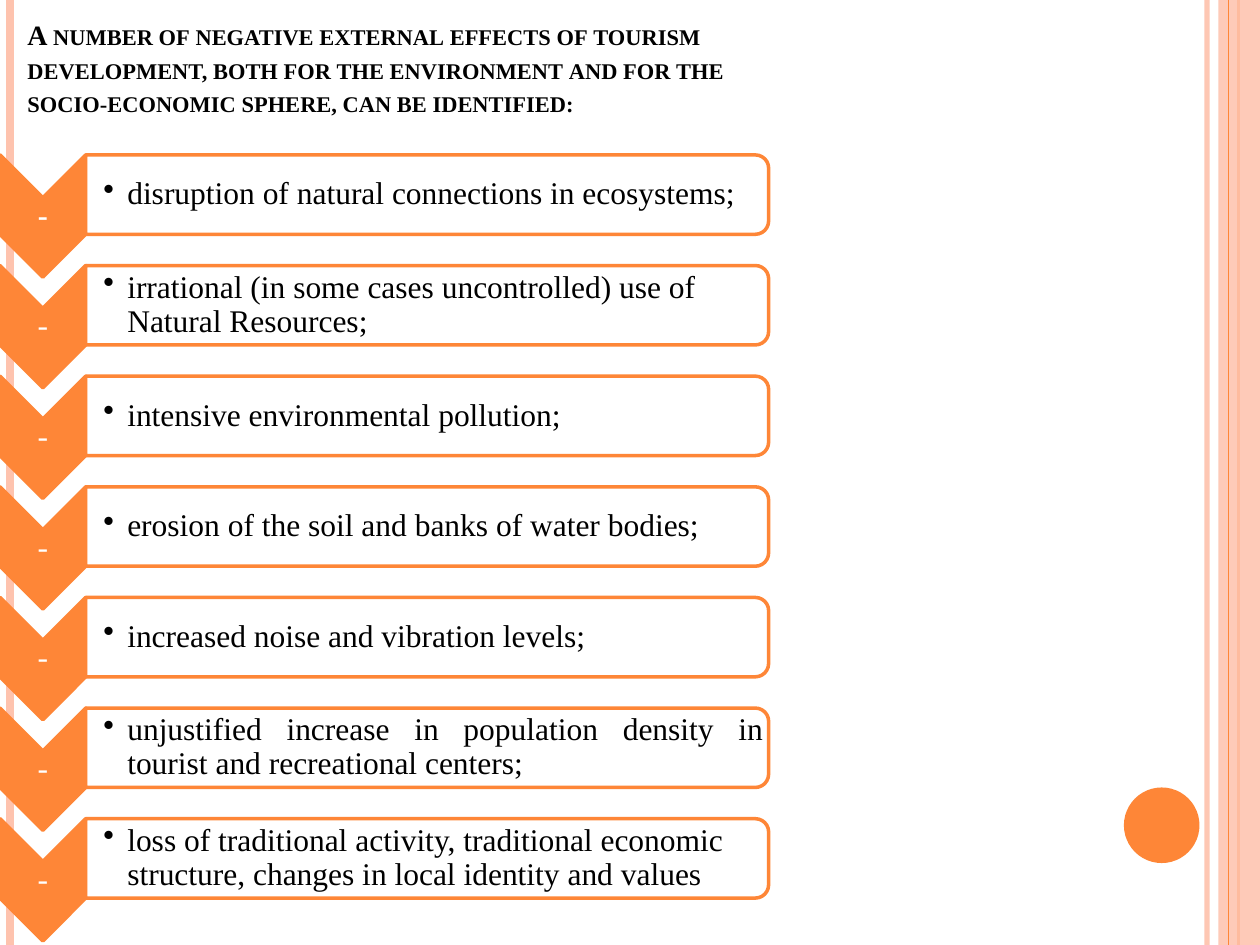
import pptx
import pptx.util
import pptx.dml.color
import pptx.enum.shapes
import pptx.enum.text
import pptx.oxml.ns

COLS, ROWS = 100, 75  # square grid, ten cells to the inch
CELL = pptx.util.Inches(0.1)
HUES = {"main": "FE8637", "pale": "FEC3AE", "text": "000000", "white": "FFFFFF"}
FONT = "Times New Roman"
KIND = pptx.enum.shapes.MSO_SHAPE
SIDE = pptx.enum.text.PP_ALIGN
MID = pptx.enum.text.MSO_ANCHOR.MIDDLE
LOW = pptx.enum.text.MSO_ANCHOR.BOTTOM

TITLE = ("A number of negative external effects of tourism development, both for "
         "the environment and for the socio-economic sphere, can be identified:")
ITEMS = [
    ("disruption of natural connections in ecosystems;", SIDE.LEFT),
    ("irrational (in some cases uncontrolled) use of Natural Resources;", SIDE.LEFT),
    ("intensive environmental pollution;", SIDE.LEFT),
    ("erosion of the soil and banks of water bodies;", SIDE.LEFT),
    ("increased noise and vibration levels;", SIDE.LEFT),
    ("unjustified increase in population density in tourist and recreational centers;",
     SIDE.JUSTIFY),
    ("loss of traditional activity, traditional economic structure, "
     "changes in local identity and values", SIDE.LEFT),
]
TOP, STEP = 12.6, 8.78  # first row of the list and row pitch


def grid(*cells):
    return [round(cell * CELL) for cell in cells]


def hue(name):
    return pptx.dml.color.RGBColor.from_string(HUES[name])


def child(node, tag, **attrs):
    part = node.makeelement(pptx.oxml.ns.qn(tag), attrs)
    node.append(part)
    return part


def fade(shape, share):
    """Set the opacity, in percent, of the first colour of a shape."""
    tone = next(shape._element.iter(pptx.oxml.ns.qn("a:srgbClr")))
    child(tone, "a:alpha", val=str(share * 1000))


def rule(slide, col, width, color, alpha=None):
    x, end = grid(col, ROWS)
    line = slide.shapes.add_connector(
        pptx.enum.shapes.MSO_CONNECTOR.STRAIGHT, x, 0, x, end)
    line.line.color.rgb = hue(color)
    line.line.width = pptx.util.Pt(width)
    child(line._element.spPr, "a:effectLst")
    if alpha:
        fade(line, alpha)


def form(slide, kind, cells, fill, line=None, alpha=None, turn=0):
    """Draw a preset shape; cells give its left, top, width and height."""
    shape = slide.shapes.add_shape(kind, *grid(*cells))
    shape.shadow.inherit = False
    shape.rotation = turn
    shape.fill.solid()
    shape.fill.fore_color.rgb = hue(fill)
    if line:
        shape.line.color.rgb = hue(line)
        shape.line.width = pptx.util.Pt(2)
    else:
        shape.line.fill.background()
    if alpha:
        fade(shape, alpha)


def upright(slide, kind, cells, **style):
    """Draw a shape turned a quarter, so that it fills the given cells."""
    x, y, w, h = cells
    form(slide, kind, (x + (w - h) / 2, y + (h - w) / 2, h, w), turn=90, **style)


def write(slide, text, cells, size=18, font=FONT, color="text", bold=False, small=False,
          align=SIDE.LEFT, anchor=MID, pad=(0.1, 0.1, 0.1, 0.1), space=0.9, bullet=False):
    frame = slide.shapes.add_textbox(*grid(*cells)).text_frame
    frame.word_wrap = True
    frame.vertical_anchor = anchor
    (frame.margin_left, frame.margin_top,
     frame.margin_right, frame.margin_bottom) = grid(*pad)
    para = frame.paragraphs[0]
    para.alignment = align
    para.line_spacing = space
    if bullet:
        props = para._p.get_or_add_pPr()
        dent = grid(1.9)[0]
        props.set("marL", str(dent))
        props.set("indent", str(-dent))
        child(props, "a:buChar", char="•")
    run = para.add_run()
    run.text = text
    run.font.name = font
    run.font.size = pptx.util.Pt(size)
    run.font.bold = bold
    run.font.color.rgb = hue(color)
    if small:
        run._r.get_or_add_rPr().set("cap", "small")


def decor(slide):
    rule(slide, 95.8, 3, "pale", alpha=93)
    rule(slide, 0.8, 4.5, "pale")
    rule(slide, 98.3, 1.5, "main")
    form(slide, KIND.RECTANGLE, (96.7, 0, COLS - 96.7, ROWS), "pale", alpha=87)
    rule(slide, 97.5, 0.75, "main")
    form(slide, KIND.OVAL, (89.2, 62.5, 6, 6), "main")


def entry(slide, row, text, align, font):
    """Draw one chevron with its box, starting at the given row."""
    upright(slide, KIND.CHEVRON, (0, row - 0.3, 6.8, 9.7), fill="main", line="main")
    write(slide, "-", (0, row + 3.1, 6.8, 2.9), font=font, color="white",
          align=SIDE.CENTER)
    upright(slide, KIND.ROUND_2_SAME_RECTANGLE, (6.8, row - 0.3, 54.2, 6.3),
            fill="white", line="main", alpha=90)
    write(slide, text, (6.8, row, 53.9, 5.7), align=align,
          pad=(1.4, 0.1, 0.1, 0.1), bullet=True)


def main():
    deck = pptx.Presentation()
    deck.slide_width, deck.slide_height = grid(COLS, ROWS)
    slide = deck.slides.add_slide(deck.slide_layouts[6])
    # Side stripes and disc
    decor(slide)
    # Heading
    write(slide, TITLE, (1.2, 0.5, 60, 9.4), size=16, bold=True, small=True,
          anchor=LOW, pad=(1, 0.5, 1, 0.5), space=1)
    # Chevron list
    for index, (text, align) in enumerate(ITEMS):
        font = FONT if index else "TeX Gyre Schola"
        entry(slide, TOP + index * STEP, text, align, font)
    deck.save("out.pptx")


if __name__ == "__main__":
    main()
